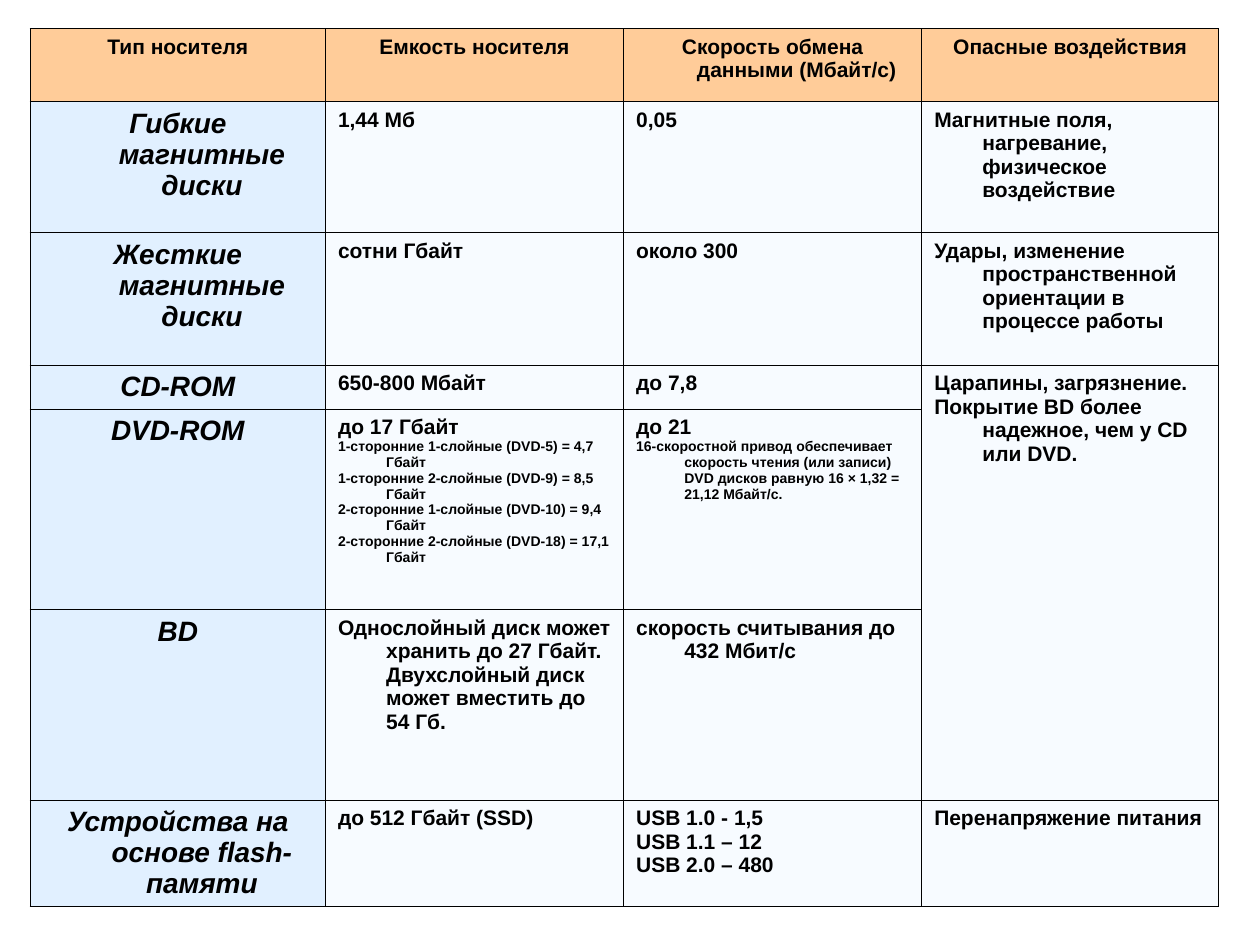
from lxml.etree import SubElement
from pptx import Presentation
from pptx.dml.color import RGBColor
from pptx.enum.text import PP_ALIGN
from pptx.oxml.ns import qn
from pptx.util import Cm, Pt

COLORS = {"header": "FFCC99", "media": "E1F0FF", "body": "F7FBFF", "ink": "000000"}
FONT = "Arial"
HEADER_PT, MEDIA_PT, BODY_PT, NOTE_PT = 12, 16, 12, 8
HANGING = Cm(0.97)
COL_WIDTHS = [5.95, 6.01, 6.01, 5.99]
ROW_HEIGHTS = [1.47, 2.64, 2.67, 0.89, 4.04, 3.84, 2.06]

HEADERS = ["Тип носителя", "Емкость носителя",
           "Скорость обмена данными (Мбайт/с)", "Опасные воздействия"]
MEDIA = [
    ("Гибкие магнитные диски", ["1,44 Мб"], ["0,05"],
     ["Магнитные поля, нагревание, физическое воздействие"]),
    ("Жесткие магнитные диски", ["сотни Гбайт"], ["около 300"],
     ["Удары, изменение пространственной ориентации в процессе работы"]),
    ("CD-ROM", ["650-800 Мбайт"], ["до 7,8"],
     ["Царапины, загрязнение.", "Покрытие BD более надежное, чем у CD или DVD."]),
    ("DVD-ROM", ["до 17 Гбайт"], ["до 21"], []),
    ("BD",
     ["Однослойный диск может хранить до 27 Гбайт. Двухслойный диск может вместить до 54 Гб."],
     ["скорость считывания до 432 Мбит/с"], []),
    ("Устройства на основе flash-памяти", ["до 512 Гбайт (SSD)"],
     ["USB 1.0 - 1,5", "USB 1.1 – 12", "USB 2.0 – 480"],
     ["Перенапряжение питания"]),
]
NOTES = {
    (4, 1): ["1-сторонние 1-слойные (DVD-5) = 4,7 Гбайт",
             "1-сторонние 2-слойные (DVD-9) = 8,5 Гбайт",
             "2-сторонние 1-слойные (DVD-10) = 9,4 Гбайт",
             "2-сторонние 2-слойные (DVD-18) = 17,1 Гбайт"],
    (4, 2): ["16-скоростной привод обеспечивает скорость чтения (или записи) "
             "DVD дисков равную 16 × 1,32 = 21,12 Мбайт/с."],
}


def style_cell(cell, fill):
    """Give a cell thin borders on all sides and a solid fill."""
    tc_pr = cell._tc.get_or_add_tcPr()
    for side in ("a:lnL", "a:lnR", "a:lnT", "a:lnB"):
        line = SubElement(tc_pr, qn(side), w=str(Pt(0.75)))
        solid = SubElement(line, qn("a:solidFill"))
        SubElement(solid, qn("a:srgbClr"), val=COLORS["ink"])
    cell.fill.solid()
    cell.fill.fore_color.rgb = RGBColor.from_string(COLORS[fill])


def write_cell(cell, lines, align=PP_ALIGN.LEFT, italic=False):
    """Write (text, size) lines as bold paragraphs with a hanging indent."""
    tf = cell.text_frame
    for i, (text, size) in enumerate(lines):
        p = tf.add_paragraph() if i else tf.paragraphs[0]
        p.alignment = align
        p_pr = p._p.get_or_add_pPr()
        p_pr.set("marL", str(HANGING))
        p_pr.set("indent", str(-HANGING))
        r = p.add_run()
        r.text = text
        r.font.name = FONT
        r.font.size = Pt(size)
        r.font.bold = True
        r.font.italic = italic
        r.font.color.rgb = RGBColor.from_string(COLORS["ink"])


def add_media_table(s, left, top, width, height):
    """Place the table of storage media in the given box."""
    table = s.shapes.add_table(len(ROW_HEIGHTS), len(COL_WIDTHS),
                               left, top, width, height).table
    table.first_row = table.horz_banding = False
    for col, share in zip(table.columns, COL_WIDTHS):
        col.width = int(width * share / sum(COL_WIDTHS))
    for row, share in zip(table.rows, ROW_HEIGHTS):
        row.height = int(height * share / sum(ROW_HEIGHTS))

    for c, header in enumerate(HEADERS):
        cell = table.cell(0, c)
        style_cell(cell, "header")
        write_cell(cell, [(header, HEADER_PT)], PP_ALIGN.CENTER)

    for r, (name, *details) in enumerate(MEDIA, start=1):
        cell = table.cell(r, 0)
        style_cell(cell, "media")
        write_cell(cell, [(name, MEDIA_PT)], PP_ALIGN.CENTER, italic=True)
        for c, texts in enumerate(details, start=1):
            cell = table.cell(r, c)
            style_cell(cell, "body")
            notes = NOTES.get((r, c), [])
            write_cell(cell, [(t, BODY_PT) for t in texts] + [(t, NOTE_PT) for t in notes])

    table.cell(3, 3).merge(table.cell(5, 3))


def main():
    """Build and save the one-slide presentation."""
    prs = Presentation()
    prs.slide_width, prs.slide_height = Cm(25.4), Cm(19.05)
    s = prs.slides.add_slide(prs.slide_layouts[6])
    add_media_table(s, Cm(0.61), Cm(0.58), Cm(sum(COL_WIDTHS)), Cm(sum(ROW_HEIGHTS)))
    prs.save("out.pptx")


if __name__ == "__main__":
    main()
